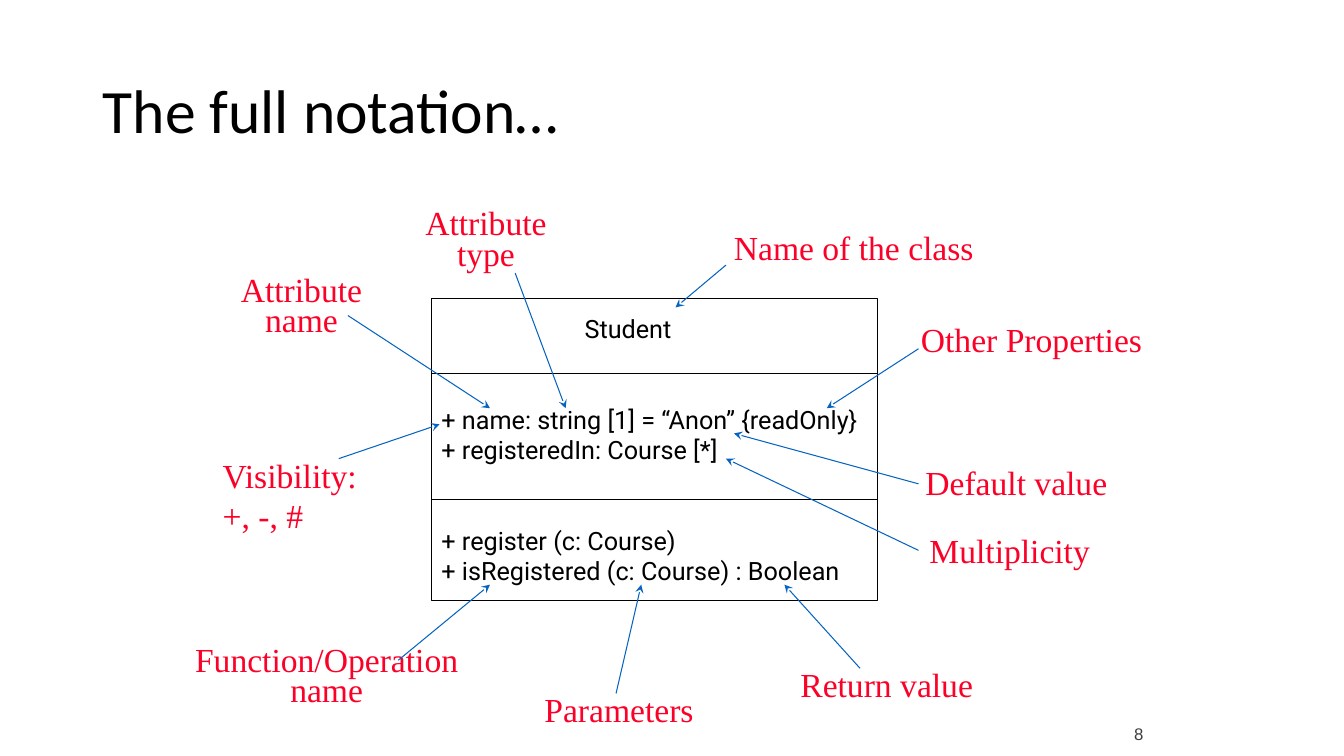
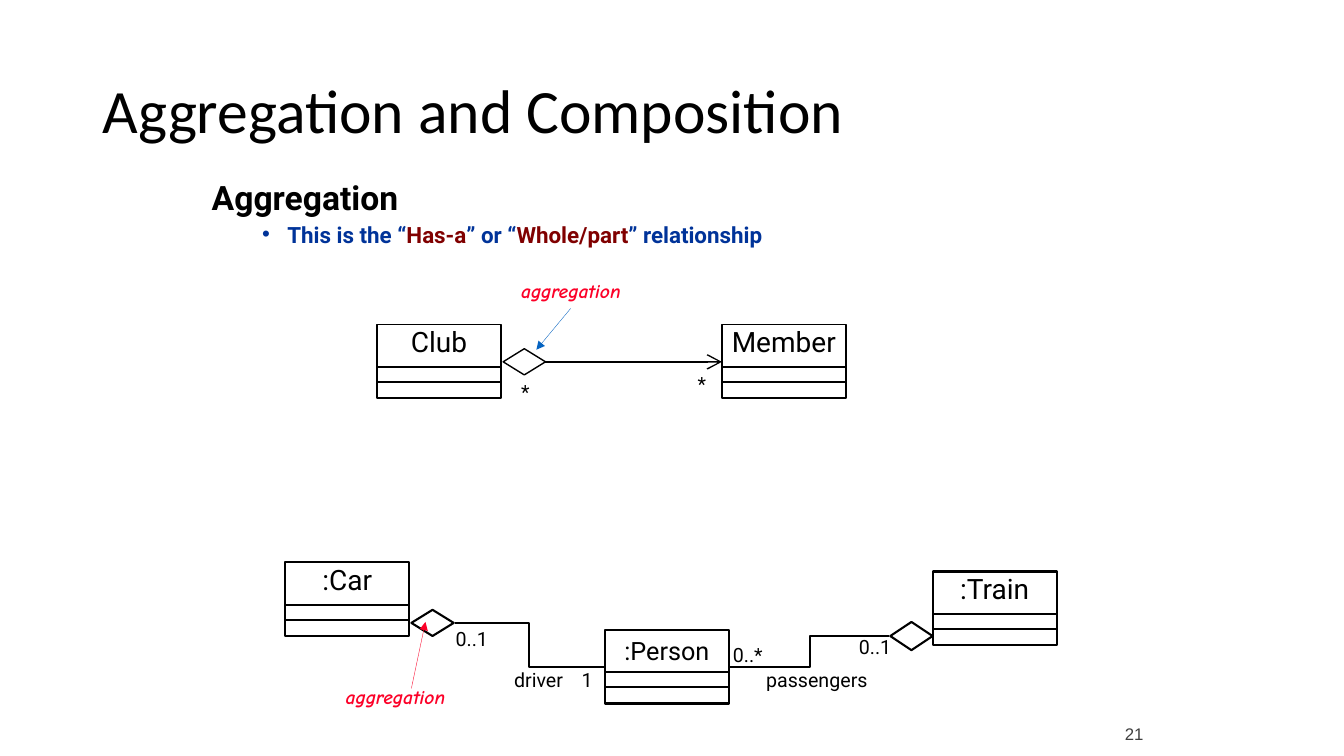
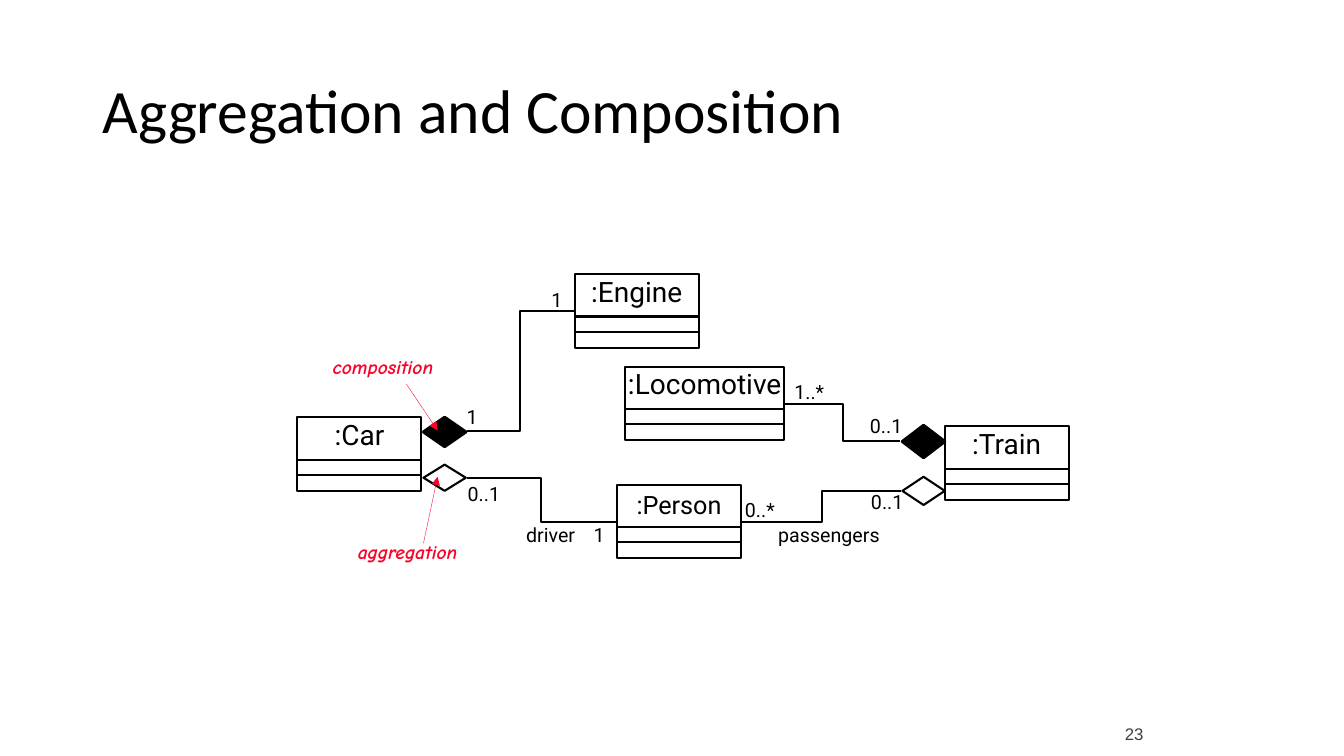
"""Build three slides on UML class notation, aggregation and composition."""
import pptx
import pptx.dml.color
import pptx.enum.shapes
import pptx.enum.text
import pptx.oxml.ns
import pptx.util
from lxml import etree

Inches, Pt = pptx.util.Inches, pptx.util.Pt
SHAPE = pptx.enum.shapes.MSO_SHAPE
CONNECTOR = pptx.enum.shapes.MSO_CONNECTOR
ALIGN = pptx.enum.text.PP_ALIGN
ANCHOR = pptx.enum.text.MSO_ANCHOR
AUTO_SIZE = pptx.enum.text.MSO_AUTO_SIZE
qn = pptx.oxml.ns.qn

COLORS = {
    "black": "000000", "white": "FFFFFF", "gray": "3F3F3F", "red": "FC0128",
    "blue": "0563C1", "navy": "003399", "maroon": "800000",
}
STYLES = {
    "title": {"name": "Calibri", "size": Pt(44), "color": "black"},
    "number": {"name": "Arial", "size": Pt(12), "color": "gray"},
    "callout": {"name": "Times New Roman", "size": Pt(24), "color": "red"},
    "member": {"name": "Roboto", "size": Pt(18), "color": "black"},
    "class": {"name": "Roboto", "size": Pt(20), "color": "black"},
    "label": {"name": "Roboto", "size": Pt(14), "color": "black"},
    "note": {"name": "Comic Neue", "size": Pt(14), "color": "red", "bold": True, "italic": True},
    "heading": {"name": "Roboto", "size": Pt(24), "color": "black", "bold": True},
    "point": {"name": "Roboto", "size": Pt(16), "bold": True},
}
HEADS = {
    "stealth": {"type": "stealth"},
    "triangle": {"type": "triangle"},
    "arrow": {"type": "arrow", "w": "lg", "len": "lg"},
}
LABEL_FRAME = {"word_wrap": False, "auto_size": AUTO_SIZE.SHAPE_TO_FIT_TEXT}
LEFT_FORMAT = {"alignment": ALIGN.LEFT}
TIGHT_FORMAT = {"alignment": ALIGN.CENTER, "line_spacing": 0.75}

STUDENT_BOX = (4.28, 2.96, 4.42, 3)
STUDENT_DIVIDERS = [3.71, 4.96]
STUDENT_LINES = [
    ("Student", 0, 1.42),
    ("+ name: string [1] = “Anon” {readOnly}", 43, 0),
    ("+ registeredIn: Course [*]", 0, 0),
    ("+ register (c: Course)", 43, 0),
    ("+ isRegistered (c: Course) : Boolean", 0, 0),
]
CALLOUTS = [
    (["Name of the class"], (7.18, 2.2, 2.58, 0.5), LEFT_FORMAT, (7.2, 2.63, 6.7, 3.05)),
    (["Visibility:", "+, -, #"], (2.11, 4.46, 1.55, 0.91), LEFT_FORMAT, (3.36, 4.55, 4.36, 4.21)),
    (["Attribute", "name"], (2.28, 2.71, 1.42, 0.71), TIGHT_FORMAT, (3.45, 3.13, 4.86, 4.05)),
    (["Function/Operation", "name"], (1.82, 6.38, 2.84, 0.71), TIGHT_FORMAT, (3.95, 6.55, 4.86, 5.8)),
    (["Parameters"], (5.29, 6.88, 1.7, 0.41), TIGHT_FORMAT, (6.11, 6.88, 6.36, 5.8)),
    (["Return value"], (7.83, 6.63, 1.93, 0.41), TIGHT_FORMAT, (8.53, 6.63, 7.78, 5.8)),
    (["Attribute", "type"], (4.11, 2.05, 1.42, 0.71), TIGHT_FORMAT, (5.11, 2.71, 5.61, 4.05)),
    (["Multiplicity"], (9.11, 5.3, 1.81, 0.41), TIGHT_FORMAT, (9.11, 5.46, 7.2, 4.55)),
    (["Default value"], (9.07, 4.63, 2.02, 0.41), TIGHT_FORMAT, (9.11, 4.8, 7.28, 4.3)),
    (["Other Properties"], (9.02, 3.21, 2.42, 0.41), TIGHT_FORMAT, (9.11, 3.46, 8.2, 4.05)),
]
BODY_BOX = (2, 1.7, 9.33, 5.38)
BODY_HEADING = "Aggregation"
BODY_POINT = [
    ("This is the “", "navy"), ("Has-a", "maroon"), ("” or “", "navy"),
    ("Whole/part", "maroon"), ("” relationship", "navy"),
]

CLUB_DIAGRAM = {
    "weight": 1,
    "elbows": [],
    "classes": [("Member", 7.16, 3.22, 1.23), ("Club", 3.74, 3.22, 1.23)],
    "diamonds": [(4.99, 3.46, 0.26, "white", 1)],
    "labels": [("*", 6.82, 3.64, 0.28), ("*", 5.07, 3.72, 0.28)],
    "notes": [("aggregation", 5.07, 2.72, 1.28)],
    "arrows": [
        ((5.41, 3.59, 7.16, 3.59), "black", 1, "arrow"),
        ((5.66, 3.06, 5.32, 3.47), "blue", 0.25, "triangle"),
    ],
}
TRAVEL_DIAGRAM = {
    "weight": 1.5,
    "elbows": [(4.51, 6.18, 5.99, 6.62), (7.24, 6.62, 8.82, 6.31)],
    "classes": [(":Person", 6, 6.25, 1.23), (":Car", 2.83, 5.58, 1.23), (":Train", 9.25, 5.67, 1.23)],
    "diamonds": [(4.08, 6.05, 0.26, "white", 1.5), (8.83, 6.17, 0.28, "white", 1.5)],
    "labels": [
        ("0..1", 4.42, 6.17, 0.55), ("0..1", 8.42, 6.25, 0.55), ("passengers", 7.5, 6.58, 1.21),
        ("driver", 5, 6.58, 0.69), ("1", 5.67, 6.58, 0.31), ("0..*", 7.17, 6.33, 0.55),
    ],
    "notes": [("aggregation", 3.33, 6.75, 1.28)],
    "arrows": [((4.08, 6.83, 4.22, 6.17), "red", 0.25, "triangle")],
}
PARTS_DIAGRAM = {
    "weight": 1.5,
    "elbows": [(4.63, 4.28, 5.69, 3.09), (7.79, 4.01, 8.93, 4.38)],
    "classes": [(":Engine", 5.7, 2.72, 1.23), (":Locomotive", 6.2, 3.64, 1.58)],
    "diamonds": [(4.2, 4.14, 0.29, "black", 2.25), (8.95, 4.22, 0.32, "black", 2.25)],
    "labels": [
        ("1", 4.53, 3.97, 0.31), ("1..*", 7.78, 3.72, 0.55),
        ("1", 5.37, 2.81, 0.31), ("0..1", 8.53, 4.06, 0.55),
    ],
    "notes": [("composition", 3.2, 3.47, 1.27)],
    "arrows": [((4.03, 3.81, 4.34, 4.27), "red", 0.25, "triangle")],
}
TRAVEL_SHIFT = (0.12, -1.44)


def rgb(color):
    return pptx.dml.color.RGBColor.from_string(COLORS[color])


def apply(target, values):
    for name, value in values.items():
        setattr(target, name, value)


def add_span(para, text, style, color=None):
    span = para.add_run()
    span.text = text
    values = dict(STYLES[style])
    span.font.color.rgb = rgb(color or values["color"])
    values.pop("color", None)
    apply(span.font, values)


def write_lines(frame, lines, style, frame_format, para_format):
    apply(frame, frame_format)
    for index, line in enumerate(lines):
        para = frame.paragraphs[0] if index == 0 else frame.add_paragraph()
        apply(para, para_format)
        add_span(para, line, style)


def add_label(page, lines, place, style, frame_format=LABEL_FRAME, para_format=LEFT_FORMAT):
    box = page.shapes.add_textbox(*map(Inches, place))
    write_lines(box.text_frame, lines, style, frame_format, para_format)


def add_outline(page, kind, place, weight, fill=None):
    shape = page.shapes.add_shape(kind, *map(Inches, place))
    shape.shadow.inherit = False
    if fill:
        shape.fill.solid()
        shape.fill.fore_color.rgb = rgb(fill)
    else:
        shape.fill.background()
    shape.line.color.rgb = rgb("black")
    shape.line.width = Pt(weight)
    return shape


def add_line(page, ends, color, weight, head=None, kind=CONNECTOR.STRAIGHT):
    line = page.shapes.add_connector(kind, *map(Inches, ends))
    line.line.color.rgb = rgb(color)
    line.line.width = Pt(weight)
    properties = line.element.spPr
    if head:
        etree.SubElement(properties.find(qn("a:ln")), qn("a:tailEnd"), HEADS[head])
    etree.SubElement(properties, qn("a:effectLst"))


def add_class(page, name, left, top, width, weight):
    box = add_outline(page, SHAPE.RECTANGLE, (left, top, width, 0.73), weight)
    small = name == ":Person"
    frame_format = {
        "word_wrap": False, "vertical_anchor": ANCHOR.TOP,
        "margin_top": Inches(0.05 if small else 0), "margin_bottom": 0,
    }
    style = "member" if small else "class"
    write_lines(box.text_frame, [name], style, frame_format, {"alignment": ALIGN.CENTER})
    add_outline(page, SHAPE.RECTANGLE, (left, top + 0.42, width, 0.15), weight)


def draw_diagram(page, diagram, shift=(0, 0)):
    dx, dy = shift
    weight = diagram["weight"]

    def moved(ends):
        return [value + shift[index % 2] for index, value in enumerate(ends)]

    for ends in diagram["elbows"]:
        add_line(page, moved(ends), "black", weight, kind=CONNECTOR.ELBOW)
    for name, left, top, width in diagram["classes"]:
        add_class(page, name, left + dx, top + dy, width, weight)
    for left, top, height, fill, outline in diagram["diamonds"]:
        add_outline(page, SHAPE.DIAMOND, (left + dx, top + dy, 0.42, height), outline, fill)
    for group, style in (("labels", "label"), ("notes", "note")):
        for text, left, top, width in diagram[group]:
            add_label(page, [text], (left + dx, top + dy, width, 0.33), style)
    for ends, color, thickness, head in diagram["arrows"]:
        add_line(page, moved(ends), color, thickness, head)


def place_box(box, place):
    apply(box, dict(zip(("left", "top", "width", "height"), map(Inches, place))))


def add_page(deck, title, number, layout=5):
    page = deck.slides.add_slide(deck.slide_layouts[layout])
    heading = page.shapes.title
    place_box(heading, (0.92, 0.4, 11.5, 1.45))
    write_lines(
        heading.text_frame, [title], "title",
        {"vertical_anchor": ANCHOR.MIDDLE, "auto_size": AUTO_SIZE.NONE, "word_wrap": True},
        {"alignment": ALIGN.LEFT, "line_spacing": 0.9},
    )
    add_label(
        page, [number], (10.64, 7.08, 0.8, 0.3), "number",
        {"vertical_anchor": ANCHOR.BOTTOM, "margin_bottom": 0, "word_wrap": True},
        {"alignment": ALIGN.RIGHT},
    )
    return page


def indent(para, margin, hanging=0):
    properties = para._p.get_or_add_pPr()
    properties.set("marL", str(Inches(margin)))
    properties.set("indent", str(Inches(hanging)))
    return properties


def add_student(page):
    left, top, width, height = STUDENT_BOX
    box = add_outline(page, SHAPE.RECTANGLE, STUDENT_BOX, 0.75)
    frame = box.text_frame
    apply(frame, {"word_wrap": True, "vertical_anchor": ANCHOR.MIDDLE})
    for index, (text, gap, margin) in enumerate(STUDENT_LINES):
        para = frame.add_paragraph() if index else frame.paragraphs[0]
        indent(para, margin)
        apply(para, {"alignment": ALIGN.LEFT, "space_before": Pt(gap)})
        add_span(para, text, "member")
    for level in STUDENT_DIVIDERS:
        add_line(page, (left, level, left + width, level), "black", 0.75)


def fill_body(page):
    body = page.placeholders[1]
    place_box(body, BODY_BOX)
    frame = body.text_frame
    apply(frame, {"auto_size": AUTO_SIZE.NONE, "word_wrap": True, "vertical_anchor": ANCHOR.TOP})
    heading, point = frame.paragraphs[0], frame.add_paragraph()
    etree.SubElement(indent(heading, 0.31, -0.31), qn("a:buNone"))
    heading.space_before = Pt(0)
    add_span(heading, BODY_HEADING, "heading")
    point.level = 1
    properties = indent(point, 0.75, -0.25)
    bullet_color = etree.SubElement(properties, qn("a:buClr"))
    etree.SubElement(bullet_color, qn("a:srgbClr"), val=COLORS["navy"])
    etree.SubElement(properties, qn("a:buChar"), char="•")
    point.space_before = Pt(3)
    for text, color in BODY_POINT:
        add_span(point, text, "point", color)


def main():
    deck = pptx.Presentation()
    deck.slide_width, deck.slide_height = Inches(13.33), Inches(7.5)

    page = add_page(deck, "The full notation…", "8")
    add_student(page)
    for lines, place, para_format, ends in CALLOUTS:
        add_label(page, lines, place, "callout", para_format=para_format)
        add_line(page, ends, "blue", 0.75, "stealth")

    page = add_page(deck, "Aggregation and Composition", "21", layout=1)
    fill_body(page)
    draw_diagram(page, TRAVEL_DIAGRAM)
    draw_diagram(page, CLUB_DIAGRAM)

    page = add_page(deck, "Aggregation and Composition", "23")
    draw_diagram(page, TRAVEL_DIAGRAM, TRAVEL_SHIFT)
    draw_diagram(page, PARTS_DIAGRAM)

    deck.save("out.pptx")


if __name__ == "__main__":
    main()
